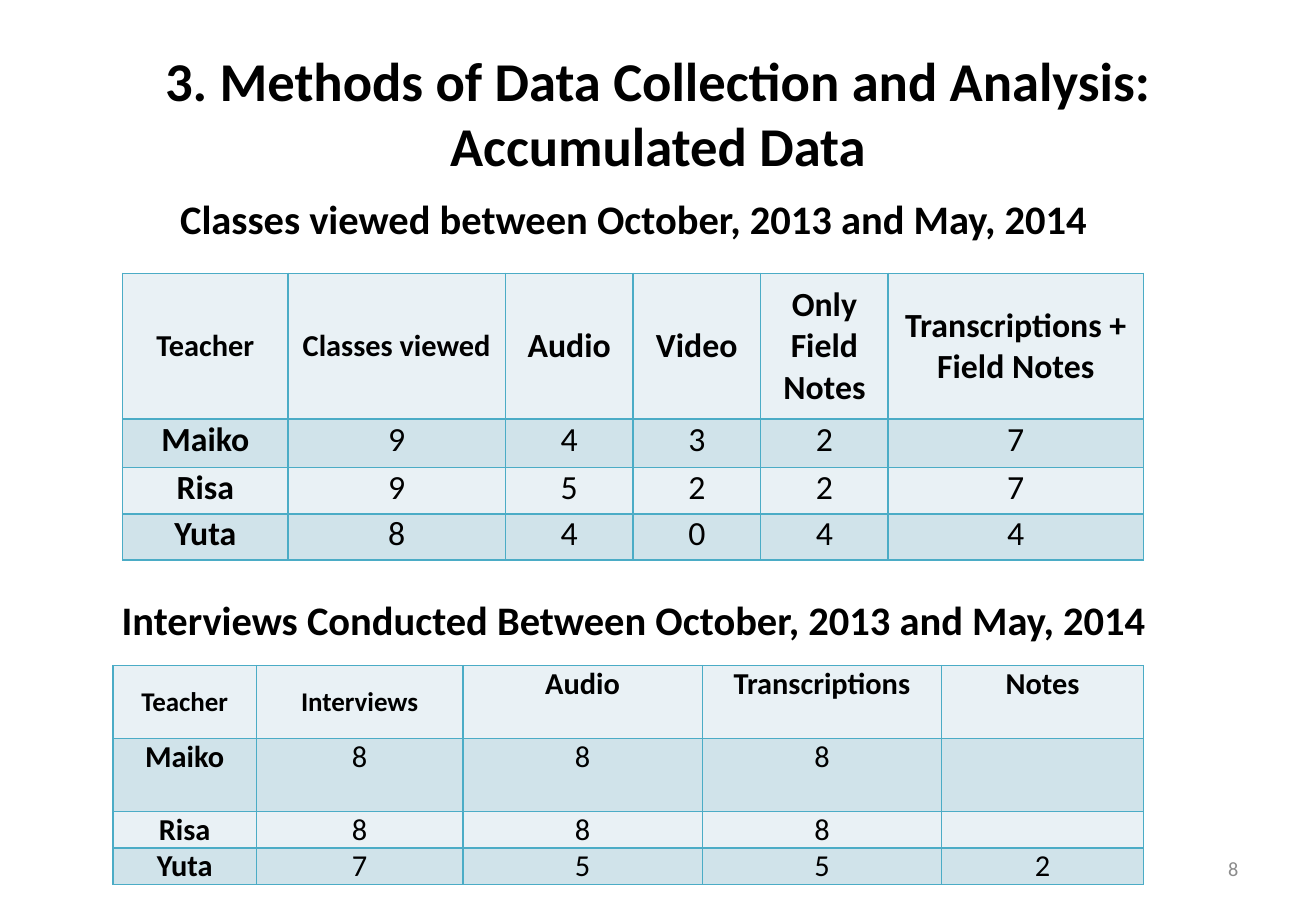
from lxml import etree
from pptx import Presentation
from pptx.dml.color import RGBColor
from pptx.enum import text as t
from pptx.oxml import ns
from pptx.util import Inches, Pt

FONT = "Calibri"
COLORS = {
    "text": "000000",
    "number": "8C8C8C",
    "border": "4BACC6",
    "light": "E9F1F5",
    "dark": "D0E3EA",
}
TOP, MIDDLE = t.MSO_ANCHOR.TOP, t.MSO_ANCHOR.MIDDLE
CENTER, RIGHT = t.PP_ALIGN.CENTER, t.PP_ALIGN.RIGHT

CLASSES = [
    ["Teacher", "Classes viewed", "Audio", "Video", "Only Field Notes",
     "Transcriptions + Field Notes"],
    ["Maiko", "9", "4", "3", "2", "7"],
    ["Risa", "9", "5", "2", "2", "7"],
    ["Yuta", "8", "4", "0", "4", "4"],
]
INTERVIEWS = [
    ["Teacher", "Interviews", "Audio", "Transcriptions", "Notes"],
    ["Maiko", "8", "8", "8", ""],
    ["Risa", "8", "8", "8", ""],
    ["Yuta", "7", "5", "5", "2"],
]


def color(name):
    return RGBColor.from_string(COLORS[name])


def write(frame, words, size=24, bold=True, align=CENTER, tint="text"):
    para = frame.paragraphs[0]
    para.alignment = align
    if not words:
        return
    run = para.add_run()
    run.text = words
    font = run.font
    font.name, font.size, font.bold = FONT, Pt(size), bold
    font.color.rgb = color(tint)


def add_title(slide, words, box):
    title = slide.shapes.title
    title.left, title.top, title.width, title.height = map(Inches, box)
    frame = title.text_frame
    frame.word_wrap = True
    frame.auto_size = t.MSO_AUTO_SIZE.NONE
    frame.vertical_anchor = MIDDLE
    write(frame, words, size=32.4)


def add_label(slide, words, box, anchor=TOP, **style):
    frame = slide.shapes.add_textbox(*map(Inches, box)).text_frame
    frame.word_wrap = True
    frame.vertical_anchor = anchor
    write(frame, words, **style)


def add_border(cell):
    props = cell._tc.get_or_add_tcPr()
    for side in ("a:lnL", "a:lnR", "a:lnT", "a:lnB"):
        line = etree.SubElement(props, ns.qn(side), w=str(Pt(1)))
        fill = etree.SubElement(line, ns.qn("a:solidFill"))
        etree.SubElement(fill, ns.qn("a:srgbClr"), val=COLORS["border"])


def fill_cell(cell, words, band, anchor, **style):
    cell.margin_left = cell.margin_right = Inches(0.08)
    cell.margin_top = cell.margin_bottom = 0
    cell.vertical_anchor = anchor
    add_border(cell)
    cell.fill.solid()
    cell.fill.fore_color.rgb = color(band)
    write(cell.text_frame, words, **style)


def add_grid(slide, data, left, top, widths, heights, size, small, middle):
    """Add a table; its first two heads are small, its first `middle` heads centred."""
    table = slide.shapes.add_table(
        len(data), len(widths), Inches(left), Inches(top),
        Inches(sum(widths)), Inches(sum(heights))).table
    for col, width in zip(table.columns, widths):
        col.width = Inches(width)
    for r, (row, height) in enumerate(zip(data, heights)):
        table.rows[r].height = Inches(height)
        for c, words in enumerate(row):
            head = r == 0
            fill_cell(
                table.cell(r, c), words,
                band="dark" if r % 2 else "light",
                anchor=MIDDLE if head and c < middle else TOP,
                size=small if head and c < 2 else size,
                bold=head or c == 0)


def main():
    deck = Presentation()
    deck.slide_width, deck.slide_height = Inches(10.83), Inches(7.5)
    slide = deck.slides.add_slide(deck.slide_layouts[5])

    add_title(slide, "3. Methods of Data Collection and Analysis: Accumulated Data",
              (0.54, 0.3, 9.75, 1.25))
    add_grid(slide, CLASSES, 1.01, 2.25, [1.36, 1.79, 1.05, 1.05, 1.05, 2.1],
             [1.2, 0.4, 0.38, 0.38], size=20, small=18, middle=6)
    add_label(slide, "Classes viewed between October, 2013 and May, 2014",
              (0.61, 1.55, 9.21, 0.5))
    add_grid(slide, INTERVIEWS, 0.93, 5.48, [1.18, 1.7, 1.97, 1.97, 1.66],
             [0.6, 0.6, 0.3, 0.3], size=18, small=16, middle=2)
    add_label(slide, "Interviews Conducted Between October, 2013 and May, 2014",
              (0.61, 4.85, 9.21, 0.5))
    add_label(slide, "8", (7.76, 6.95, 2.53, 0.4), anchor=MIDDLE,
              size=12, bold=False, align=RIGHT, tint="number")

    deck.save("out.pptx")


if __name__ == "__main__":
    main()
